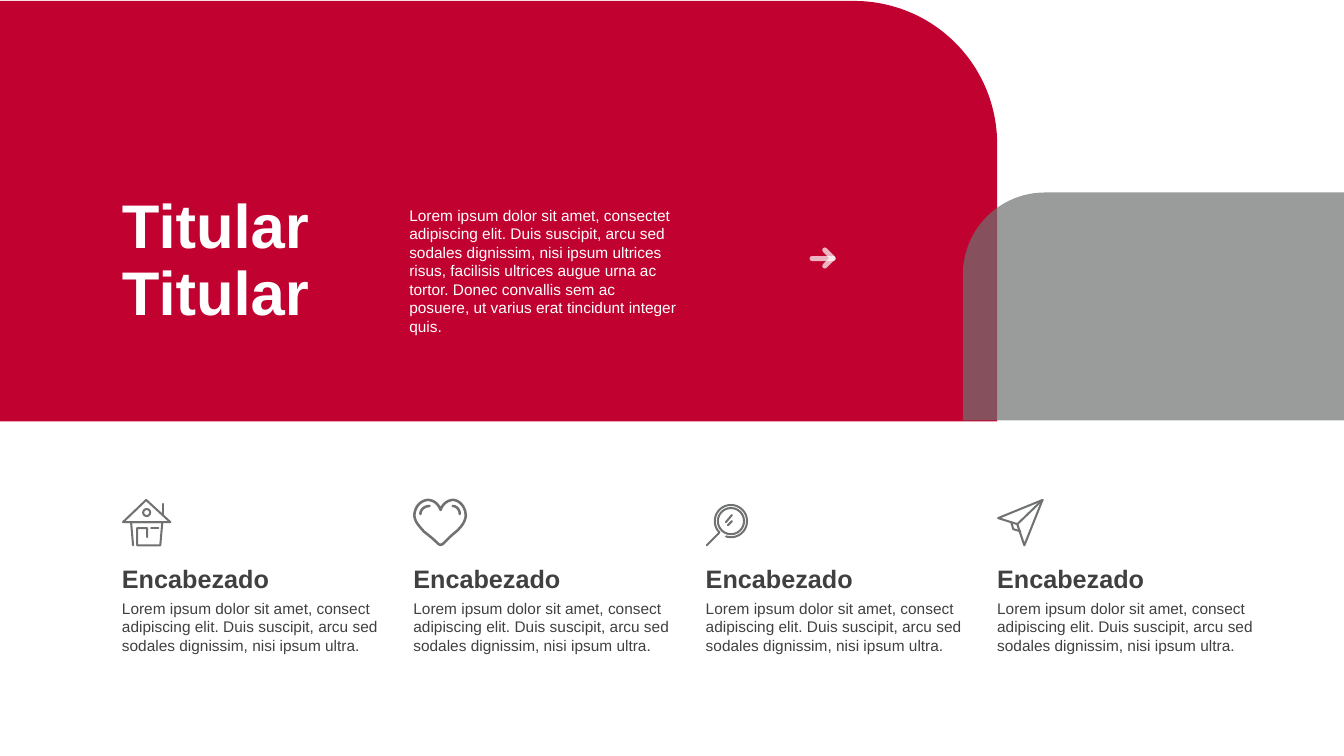
"""Build a slide with a red title panel and four icon columns."""
from dataclasses import dataclass
from math import cos, radians, sin
from typing import Any

from pptx import Presentation
from pptx import util as u
from pptx.dml.color import RGBColor
from pptx.enum import shapes, text
from pptx.oxml.ns import qn

PX = 9144
RED, GREY, WHITE, DARK = "C10230", "6F7271", "FFFFFF", "404040"
INTRO = ("Lorem ipsum dolor sit amet, consectet adipiscing elit. Duis suscipit, arcu sed "
         "sodales dignissim, nisi ipsum ultrices risus, facilisis ultrices augue urna ac "
         "tortor. Donec convallis sem ac posuere, ut varius erat tincidunt integer quis.")
BODY = ("Lorem ipsum dolor sit amet, consect adipiscing elit. Duis suscipit, arcu sed "
        "sodales dignissim, nisi ipsum ultra.")
COLUMN_LEFT, COLUMN_STEP, COLUMN_COUNT = 121, 868, 4
ICON_TOP = 495

Point = tuple[float, float]
Box = tuple[int, int, int, int]


@dataclass(frozen=True)
class TextStyle:
    """Describe the look of a text block."""
    size: int
    color: str
    bold: bool = False
    spacing: float = 1.0
    anchor: Any = text.MSO_ANCHOR.TOP


@dataclass(frozen=True)
class Stroke:
    """Describe one drawn line of an icon."""
    points: list[Point]
    closed: bool = False


@dataclass(frozen=True)
class Icon:
    """Describe an icon by its strokes, circles and line width."""
    strokes: list[Stroke]
    circles: tuple[Box, ...] = ()
    width: float = 1.45


TITLE = TextStyle(44, WHITE, True, 0.9, text.MSO_ANCHOR.BOTTOM)
INTRO_STYLE = TextStyle(11, WHITE)
HEADING = TextStyle(18, DARK, True, 0.9, text.MSO_ANCHOR.BOTTOM)
BODY_STYLE = TextStyle(11, DARK)


def arc(center: Point, radius: Point, start: int, end: int, steps: int = 40) -> list[Point]:
    """Return points along an elliptical arc, in degrees."""
    angles = [radians(start + (end - start) * i / steps) for i in range(steps + 1)]
    return [(center[0] + radius[0] * cos(a), center[1] + radius[1] * sin(a)) for a in angles]


def curve(start: Point, *segments: tuple[Point, Point, Point], steps: int = 12) -> list[Point]:
    """Return points along a chain of cubic curves."""
    points = [start]
    for first, second, end in segments:
        origin = points[-1]
        for i in range(1, steps + 1):
            t = i / steps
            weights = ((1 - t) ** 3, 3 * t * (1 - t) ** 2, 3 * t * t * (1 - t), t ** 3)
            corners = (origin, first, second, end)
            points.append((sum(w * p[0] for w, p in zip(weights, corners)),
                           sum(w * p[1] for w, p in zip(weights, corners))))
    return points


HOUSE = Icon([
    Stroke([(1, 23), (24, 1), (48, 23)], True),
    Stroke([(41, 5), (41, 15)]),
    Stroke([(11, 46), (9, 23), (40, 23), (38, 46), (15, 46), (15, 29), (25, 29), (25, 38)]),
    Stroke([(29, 29), (36, 29)]),
], ((21, 10, 7, 7),))
HEART = Icon([
    Stroke(curve((27, 11),
                 ((29, 5), (34, 1), (40, 1)), ((47, 2), (52, 9), (52, 17)),
                 ((51, 24), (47, 28), (43, 32)), ((38, 36), (36, 38), (30, 44)),
                 ((28, 46), (26, 46), (24, 44)), ((18, 38), (15, 36), (10, 32)),
                 ((7, 28), (2, 24), (1, 17)), ((1, 9), (6, 2), (14, 1)),
                 ((20, 1), (25, 5), (27, 11))), True),
    Stroke(arc((39, 15), (7, 8), -90, 0)),
    Stroke(arc((16, 15), (9, 8), -90, -180)),
], width=1.8)
MAGNIFIER = Icon([
    Stroke([(20, 23), (26, 16)]),
    Stroke([(22, 26), (26, 22)]),
    Stroke(arc((25, 22), (16, 16), 108, -225) + [(1, 46)]),
], ((12, 9, 26, 26),))
PLANE = Icon([
    Stroke([(1, 19), (45, 1), (27, 46), (20, 25)], True),
    Stroke([(20, 25), (45, 1)]),
    Stroke([(14, 23), (16, 30), (23, 32)]),
])
ICONS = (HOUSE, HEART, MAGNIFIER, PLANE)
ARROW_HEAD = Stroke([(818, 248), (826, 256), (818, 264)])


def set_values(target: Any, values: dict[str, Any]) -> None:
    """Set attributes from a dict of format values."""
    for name, value in values.items():
        setattr(target, name, value)


def paint(fill: Any, color: str, opacity: int = 100) -> None:
    """Give a fill a solid colour and an opacity in percent."""
    fill.solid()
    fill.fore_color.rgb = RGBColor.from_string(color)
    if opacity < 100:
        color_element = fill._xPr.find(qn("a:solidFill"))[0]
        alpha = color_element.makeelement(qn("a:alpha"), {"val": str(opacity * 1000)})
        color_element.append(alpha)


def scaled(box: Box) -> list[u.Emu]:
    """Turn a px box into EMU."""
    return [u.Emu(value * PX) for value in box]


def add_panel(parent: Any, kind: Any, box: Box, color: str, adjustment: float,
              opacity: int = 100) -> Any:
    """Add a filled rounded shape without an outline."""
    shape = parent.add_shape(kind, *scaled(box))
    shape.shadow.inherit = False
    shape.adjustments[0] = adjustment
    paint(shape.fill, color, opacity)
    shape.line.fill.background()
    return shape


def outline(shape: Any, color: str, width: float, opacity: int = 100) -> None:
    """Leave a shape unfilled and give it a round line."""
    shape.shadow.inherit = False
    shape.fill.background()
    shape.line.width = u.Pt(width)
    paint(shape.line.fill, color, opacity)
    line = shape.line._ln
    line.set("cap", "rnd")
    line.append(line.makeelement(qn("a:round"), {}))


def add_stroke(parent: Any, stroke: Stroke, origin: tuple[int, int], color: str,
               width: float, opacity: int = 100) -> None:
    """Draw one stroke from its origin."""
    points = [((x + origin[0]) * PX, (y + origin[1]) * PX) for x, y in stroke.points]
    builder = parent.build_freeform(*points[0])
    builder.add_line_segments(points[1:], close=stroke.closed)
    outline(builder.convert_to_shape(), color, width, opacity)


def add_icon(slide: Any, icon: Icon, left: int) -> None:
    """Draw an icon as one group."""
    group = slide.shapes.add_group_shape().shapes
    for stroke in icon.strokes:
        add_stroke(group, stroke, (left, ICON_TOP), GREY, icon.width)
    for x, y, width, height in icon.circles:
        box = (left + x, ICON_TOP + y, width, height)
        outline(group.add_shape(shapes.MSO_SHAPE.OVAL, *scaled(box)), GREY, icon.width)


def write(shape: Any, box: Box, paragraphs: list[str], style: TextStyle) -> None:
    """Place a text shape and fill it with formatted paragraphs."""
    set_values(shape, dict(zip(("left", "top", "width", "height"), scaled(box))))
    frame = shape.text_frame
    frame.text = "\n".join(paragraphs)
    set_values(frame, {"word_wrap": True, "auto_size": text.MSO_AUTO_SIZE.NONE,
                       "vertical_anchor": style.anchor, "margin_left": 0,
                       "margin_top": 0, "margin_right": 0, "margin_bottom": 0})
    for paragraph in frame.paragraphs:
        set_values(paragraph, {"alignment": text.PP_ALIGN.LEFT, "line_spacing": style.spacing,
                               "space_before": u.Pt(0)})
        font = paragraph.runs[0].font
        set_values(font, {"name": "Arial", "size": u.Pt(style.size), "bold": style.bold})
        paint(font.fill, style.color)


def add_text(slide: Any, box: Box, content: str, style: TextStyle) -> None:
    """Add a text box with one paragraph."""
    write(slide.shapes.add_textbox(*scaled(box)), box, [content], style)


def main() -> None:
    """Build and save the presentation."""
    presentation = Presentation()
    set_values(presentation, {"slide_width": u.Emu(1333 * PX), "slide_height": u.Emu(750 * PX)})
    slide = presentation.slides.add_slide(presentation.slide_layouts[5])
    corner = shapes.MSO_SHAPE.ROUND_1_RECTANGLE
    red_panel = add_panel(slide.shapes, corner, (0, 1, 989, 417), RED, 0.34)
    title = slide.shapes.title
    write(title, (121, 191, 266, 135), ["Titular", "Titular"], TITLE)
    red_panel._element.addnext(title._element)
    add_text(slide, (406, 204, 266, 111), INTRO, INTRO_STYLE)

    arrow = slide.shapes.add_group_shape().shapes
    add_stroke(arrow, ARROW_HEAD, (0, 0), WHITE, 3.6, 70)
    add_panel(arrow, shapes.MSO_SHAPE.ROUNDED_RECTANGLE, (803, 254, 26, 5), WHITE, 0.5, 70)

    grey_panel = add_panel(slide.shapes, corner, (955, 191, 378, 226), GREY, 0.36, 70)
    grey_panel._element.spPr.find(qn("a:xfrm")).set("flipH", "1")
    for index, icon in enumerate(ICONS):
        left = COLUMN_LEFT + round(index * COLUMN_STEP / (COLUMN_COUNT - 1))
        add_text(slide, (left, 558, 256, 31), "Encabezado", HEADING)
        add_text(slide, (left, 594, 256, 56), BODY, BODY_STYLE)
        add_icon(slide, icon, left)
    presentation.save("out.pptx")


if __name__ == "__main__":
    main()
